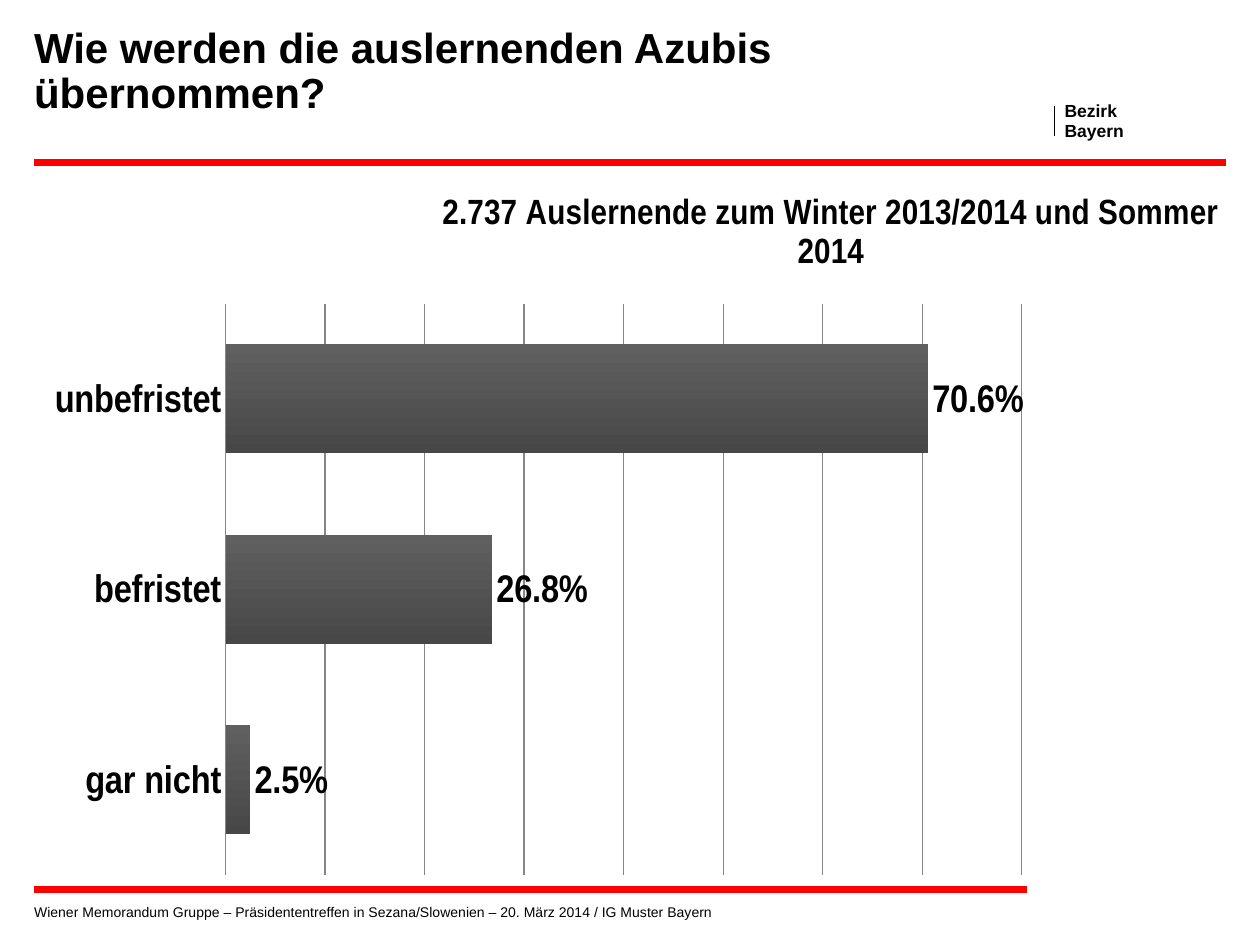
from lxml import etree
from pptx import Presentation
from pptx import util as u
from pptx.chart.data import CategoryChartData
from pptx.dml.color import RGBColor
from pptx.enum import chart as ch, shapes
from pptx.oxml import parse_xml
from pptx.oxml.ns import nsdecls, qn

WIDE, HIGH = 10, 7.5
LEFT = 0.27
FONT = "Arial"
HUES = {"ink": "000000", "red": "FF0000", "grid": "868686",
        "top": "606060", "base": "474747"}
SHARES = {"unbefristet": 0.706, "befristet": 0.268, "gar nicht": 0.025}


def hue(name):
    return RGBColor.from_string(HUES[name])


def style(font, size, bold=False):
    font.name, font.size, font.bold = FONT, u.Pt(size), bold
    font.color.rgb = hue("ink")


def add_line(slide, start, end, color, width):
    ends = [u.Inches(n) for n in (*start, *end)]
    line = slide.shapes.add_connector(shapes.MSO_CONNECTOR.STRAIGHT, *ends)
    line.line.color.rgb = hue(color)
    line.line.width = u.Pt(width)
    etree.SubElement(line._element.spPr, qn("a:effectLst"))


def add_text(slide, box, words, size, lead, bold=False, wrap=True):
    frame = slide.shapes.add_textbox(*map(u.Inches, box)).text_frame
    frame.margin_left = frame.margin_right = 0
    frame.margin_top = frame.margin_bottom = 0
    frame.word_wrap = wrap
    para = frame.paragraphs[0]
    para.text = words
    para.line_spacing = u.Pt(lead)
    style(para.font, size, bold)


def place(part, **spots):
    """Set a manual layout, in shares of the chart, on a title or plot area."""
    inner = '<c:layoutTarget val="inner"/>' if "w" in spots else ""
    modes = "".join(f'<c:{k}Mode val="edge"/>' for k in "xy")
    vals = "".join(f'<c:{k} val="{v}"/>' for k, v in spots.items())
    new = parse_xml(f'<c:layout {nsdecls("c")}><c:manualLayout>{inner}{modes}'
                    f'{vals}</c:manualLayout></c:layout>')
    for old in part.findall(qn("c:layout")):
        part.remove(old)
    text = part.find(qn("c:tx"))
    part.insert(0 if text is None else part.index(text) + 1, new)


def add_title(chart, words):
    frame = chart.chart_title.text_frame
    frame.text = words
    style(frame.paragraphs[0].font, 20, True)
    chart.chart_title.include_in_layout = False
    place(chart.chart_title._element, x=0.4, y=0.01)


def set_axes(chart):
    cat, val = chart.category_axis, chart.value_axis
    cat.reverse_order = True
    cat.major_tick_mark = ch.XL_TICK_MARK.NONE
    cat.format.line.color.rgb = hue("grid")
    style(cat.tick_labels.font, 22, True)
    val.visible = False
    val.minimum_scale, val.maximum_scale, val.major_unit = 0, 0.8, 0.1
    val.has_major_gridlines = True
    val.major_gridlines.format.line.color.rgb = hue("grid")


def set_bars(plot):
    plot.gap_width, plot.overlap = 75, -25
    plot.vary_by_categories = False
    fill = plot.series[0].format.fill
    fill.gradient()
    fill.gradient_angle = 270
    for stop, name in zip(fill.gradient_stops, ("top", "base")):
        stop.color.rgb = hue(name)
    plot.has_data_labels = True
    labels = plot.data_labels
    labels.show_value = True
    labels.position = ch.XL_LABEL_POSITION.OUTSIDE_END
    labels.number_format, labels.number_format_is_linked = "0.0%", False
    style(labels.font, 22, True)


def add_bars(slide, box, title):
    data = CategoryChartData(number_format="0.0%")
    data.categories = list(SHARES)
    data.add_series("Anteil", list(SHARES.values()))
    chart = slide.shapes.add_chart(ch.XL_CHART_TYPE.BAR_CLUSTERED,
                                   *map(u.Inches, box), data).chart
    chart.has_legend = False
    style(chart.font, 18)
    add_title(chart, title)
    set_axes(chart)
    set_bars(chart.plots[0])
    area = chart._chartSpace.chart.plotArea
    place(area, x=0.19, y=0.18, w=0.79, h=0.8)


def main():
    deck = Presentation()
    deck.slide_width, deck.slide_height = u.Inches(WIDE), u.Inches(HIGH)
    slide = deck.slides.add_slide(deck.slide_layouts[6])
    add_line(slide, (LEFT, 1.29), (WIDE - LEFT, 1.29), "red", 4.5)
    add_text(slide, (8.45, 0.81, 0.47, 0.31), "Bezirk\vBayern", 10, 11,
             bold=True, wrap=False)
    add_line(slide, (8.37, 0.84), (8.37, 1.08), "ink", 0.8)
    add_line(slide, (LEFT, 7.06), (8.15, 7.06), "red", 4.5)
    add_text(slide, (LEFT, 7.14, 7.09, 0.17),
             "Wiener Memorandum Gruppe – Präsidententreffen in "
             "Sezana/Slowenien – 20. März 2014 / IG Muster Bayern", 8, 12)
    add_text(slide, (LEFT, 0.21, 7.48, 0.73),
             "Wie werden die auslernenden Azubis übernommen?", 24, 26,
             bold=True)
    add_bars(slide, (LEFT, 1.39, 9.45, 5.67),
             "2.737 Auslernende zum Winter 2013/2014 und Sommer 2014")
    deck.save("out.pptx")


if __name__ == "__main__":
    main()
